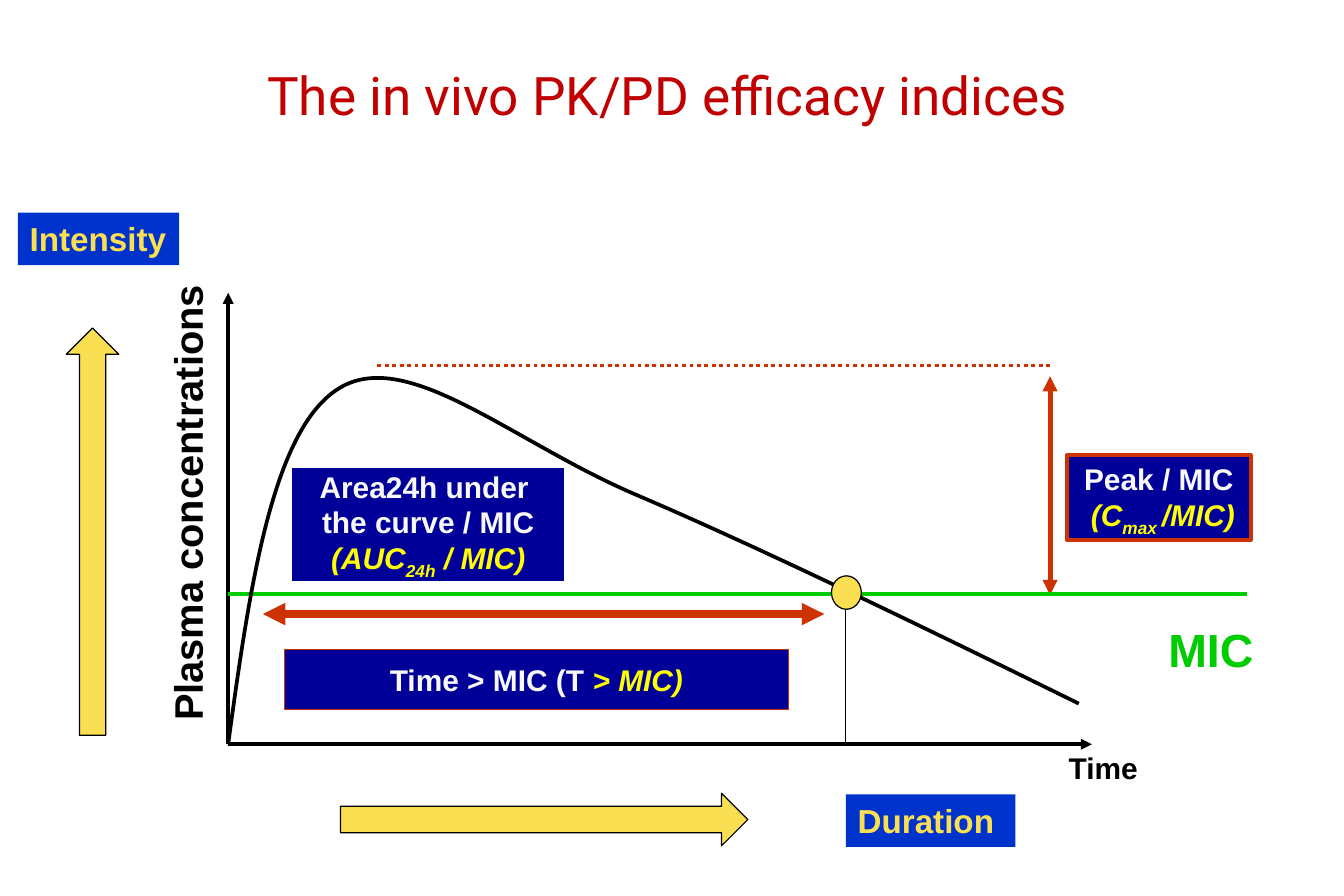
from pptx import Presentation
from pptx.dml.color import RGBColor
from pptx.enum.dml import MSO_LINE as Dash
from pptx.enum.shapes import MSO_CONNECTOR as Conn, MSO_SHAPE as Geo
from pptx.enum.text import MSO_ANCHOR as Anchor, MSO_AUTO_SIZE as Fit, PP_ALIGN as Align
from pptx.oxml.ns import qn
from pptx.util import Pt
from lxml.etree import SubElement

PX = 9144  # 100 px to the inch
BLACK, RED, GREEN, GOLD = "000000", "CC3300", "00CC00", "FBDF53"
NAVY, BLUE, PALE, YELLOW = "000099", "0033CC", "F8F8F8", "FFFF00"
X0, Y0, MIC_Y, END_X, PEAK_X = 191, 623, 497, 708, 879

# Lines: from, to, colour, width, ends with arrowheads, dash
LINES = [
    ((X0, Y0), (X0, 245), BLACK, 2.25, ["tail"], None),
    ((X0, Y0), (914, Y0), BLACK, 2.25, ["tail"], None),
    ((220, 514), (690, 514), RED, 4.5, ["head", "tail"], None),
    ((PEAK_X, 315), (PEAK_X, 498), RED, 3, ["head", "tail"], None),
    ((316, 306), (PEAK_X, 306), RED, 2.25, [], Dash.ROUND_DOT),
    ((X0, MIC_Y), (1044, MIC_Y), GREEN, 2.25, [], None),
    ((END_X, 494), (END_X, Y0), BLACK, 0.75, [], None),
]

# Concentration curve: start, then three points for each Bezier piece
CURVE = [(X0, Y0), (209, 491), (228, 359), (284, 325), (341, 290), (429, 370),
         (532, 414), (635, 458), (769, 523), (903, 589)]

# Shapes: preset, box, fill, line, width, rotation
MARKS = [
    (Geo.OVAL, (696, 482, 25, 28), GOLD, BLACK, 0.75, 0),
    (Geo.RIGHT_ARROW, (-93, 423, 341, 44), GOLD, BLACK, 0.75, 270),
    (Geo.RIGHT_ARROW, (285, 664, 341, 44), GOLD, BLACK, 0.75, 0),
]

# Index boxes: box, line, width, grow, runs of (text, format)
HOT = dict(color=YELLOW, italic=True)
SUB = dict(HOT, base=-25)
INDEX = [
    ((238, 544, 422, 50), RED, 0.75, False, [("Time > MIC (T ", {}), ("> MIC)", HOT)]),
    ((893, 381, 154, 71), RED, 2.25, True,
     [("Peak / MIC\n", {}), (" (C", HOT), ("max ", SUB), ("/MIC)", HOT)]),
    ((245, 392, 227, 94), NAVY, 0.75, False,
     [("Area24h under \nthe curve / MIC\n", {}), ("(AUC", HOT), ("24h", SUB), (" / MIC)", HOT)]),
]

# Tags: text, box
TAGS = [("Intensity", (15, 178, 135, 44)), ("Duration", (708, 665, 142, 44))]

# Labels: text, box, rotation, format
LABELS = [
    ("Plasma concentrations", (-37, 396, 387, 50), 270, dict(size=24, wrap=False, grow=True)),
    ("Time", (867, 623, 113, 40), 0, dict(grow=True)),
    ("MIC", (964, 515, 99, 57), 0, dict(size=28, color=GREEN, grow=True)),
    ("The in vivo PK/PD efficacy indices", (125, 46, 868, 66), 0,
     dict(size=32, color="C00000", font="Roboto", bold=False, anchor=Anchor.MIDDLE)),
]

deck = Presentation()
deck.slide_width, deck.slide_height = 1125 * PX, 750 * PX
slide = deck.slides.add_slide(deck.slide_layouts[6])
shapes = slide.shapes


def emu(nums):
    return [n * PX for n in nums]


def rgb(color):
    return RGBColor.from_string(color)


def stroke(line, color, width):
    line.color.rgb = rgb(color)
    line.width = Pt(width)


def write(shape, runs, wrap=True, grow=False, anchor=Anchor.TOP, align=Align.CENTER, **base):
    """Fill a shape with a string or with (text, format) runs."""
    frame = shape.text_frame
    frame.word_wrap = wrap
    frame.auto_size = Fit.SHAPE_TO_FIT_TEXT if grow else Fit.NONE
    frame.vertical_anchor = anchor
    para = frame.paragraphs[0]
    para.alignment = align
    for text, extra in [(runs, {})] if isinstance(runs, str) else runs:
        look = dict(size=18, color=BLACK, font="Arial", bold=True, italic=False, base=0)
        look.update(base, **extra) if base else look.update(extra)
        for i, part in enumerate(text.split("\n")):
            if i:
                para.add_line_break()
            if not part:
                continue
            run = para.add_run()
            run.text = part
            font = run.font
            font.name, font.size = look["font"], Pt(look["size"])
            font.bold, font.italic = look["bold"], look["italic"]
            font.color.rgb = rgb(look["color"])
            if look["base"]:
                font._element.set("baseline", str(look["base"] * 1000))


def block(geo, box, fill, line=None, width=0.75, turn=0):
    shape = shapes.add_shape(geo, *emu(box))
    shape.shadow.inherit = False
    shape.rotation = turn
    shape.fill.solid()
    shape.fill.fore_color.rgb = rgb(fill)
    if line:
        stroke(shape.line, line, width)
    else:
        shape.line.fill.background()
    return shape


# Axes, levels and spans
for start, end, color, width, heads, dash in LINES:
    link = shapes.add_connector(Conn.STRAIGHT, *emu(start + end))
    stroke(link.line, color, width)
    if dash:
        link.line.dash_style = dash
    props = link._element.spPr
    for name in heads:
        SubElement(props.find(qn("a:ln")), qn(f"a:{name}End"), type="triangle")
    SubElement(props, qn("a:effectLst"))

# Curve: every three straight steps become one Bezier piece
pen = shapes.build_freeform(*CURVE[0], scale=PX)
pen.add_line_segments(CURVE[1:], close=False)
curve = pen.convert_to_shape()
curve.shadow.inherit = False
curve.fill.background()
stroke(curve.line, BLACK, 2.25)
steps = curve._element.xpath(".//a:lnTo")
for i in range(0, len(steps), 3):
    piece = SubElement(steps[i].getparent(), qn("a:cubicBezTo"))
    for step in steps[i:i + 3]:
        piece.append(step[0])
        step.getparent().remove(step)

# Boxes, arrows and the crossing point
for box, line, width, grow, runs in INDEX:
    write(block(Geo.RECTANGLE, box, NAVY, line, width), runs, wrap=False, grow=grow,
          anchor=Anchor.TOP if grow else Anchor.MIDDLE, color=PALE)
for mark in MARKS:
    block(*mark)
for text, box in TAGS:
    write(block(Geo.RECTANGLE, box, BLUE), text, grow=True, wrap=text == "Duration",
          align=Align.LEFT, size=20, color=GOLD)

# Labels and title
for text, box, turn, look in LABELS:
    label = shapes.add_textbox(*emu(box))
    label.rotation = turn
    write(label, text, **look)

deck.save("out.pptx")
